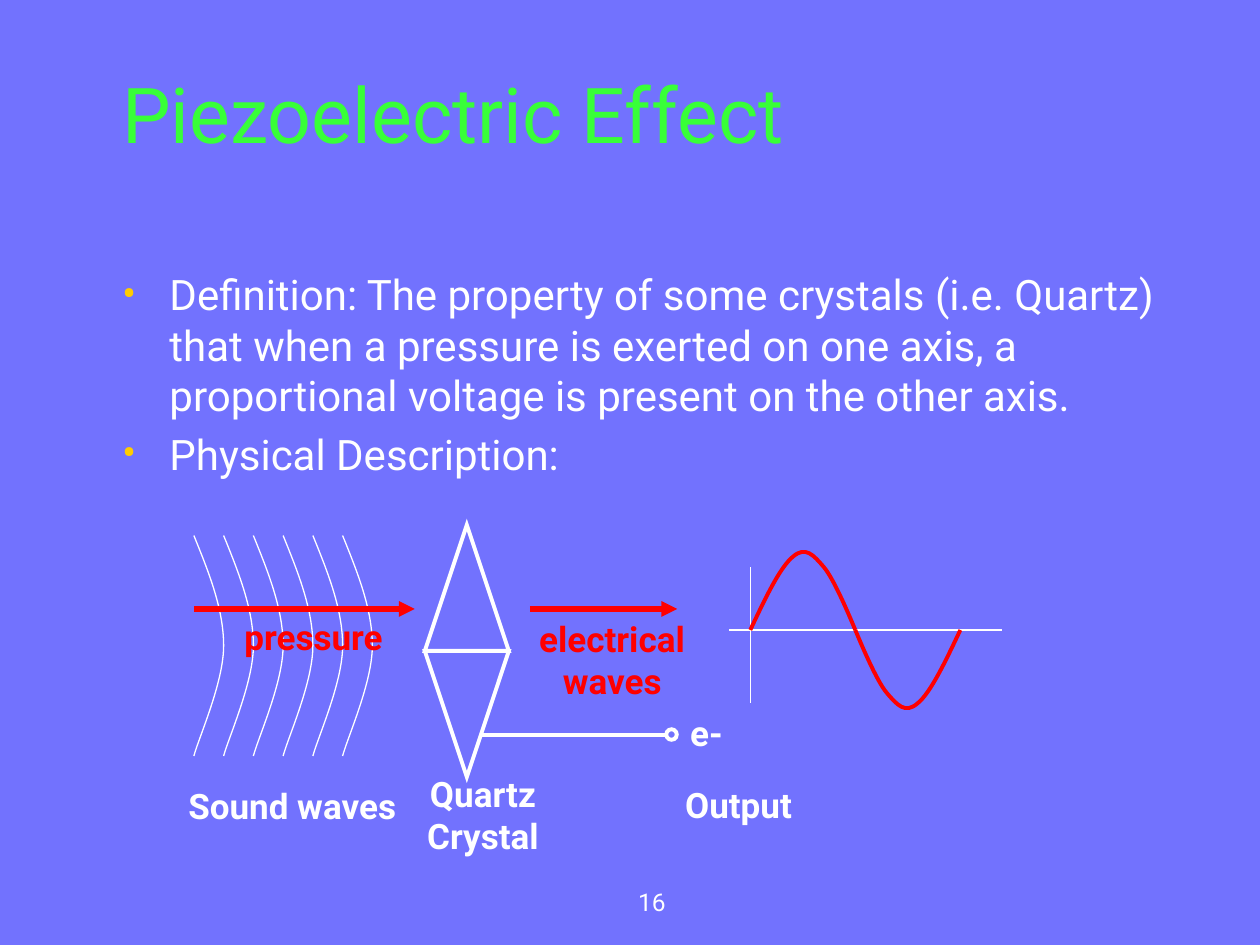
from dataclasses import dataclass

from lxml import etree
from pptx import Presentation
from pptx.dml.color import RGBColor as Rgb
from pptx.enum import shapes as kinds, text as txt
from pptx.oxml.ns import qn
from pptx.util import Pt


@dataclass(frozen=True)
class Theme:
    font: str = "Roboto"
    back: str = "7272FE"
    green: str = "38FF38"
    white: str = "FFFFFF"
    red: str = "FF0000"
    gold: str = "FFCC00"
    title: int = 44
    body: int = 24
    label: int = 20
    page: int = 14
    thin: float = 0.75
    mid: float = 2.25
    bold: float = 3


T = Theme()
MID = txt.PP_ALIGN.CENTER
LEFT = txt.PP_ALIGN.LEFT
TOP = txt.MSO_ANCHOR.TOP
RING = ((8.5, 21), (17, 42), (17, 63), (17, 84), (3, 115), (0, 126))
HUMP = ((8.5, -18), (17, -36), (24.5, -42), (31.5, -48), (36, -43),
        (42, -36), (48, -29), (57.5, -6), (60, 0))


def pen(shape, color, width):
    shape.line.color.rgb = Rgb.from_string(color)
    shape.line.width = Pt(width)


def bullet(para):
    props = para._p.get_or_add_pPr()
    props.set("marL", str(Pt(27)))
    props.set("indent", str(-Pt(27)))
    tint = etree.SubElement(props, qn("a:buClr"))
    etree.SubElement(tint, qn("a:srgbClr"), val=T.gold)
    etree.SubElement(props, qn("a:buFont"), typeface=T.font)
    etree.SubElement(props, qn("a:buChar"), char="•")


def write(slide, box, lines, size, color=T.white, bold=False, align=MID,
          anchor=TOP, wrap=True, dots=False, gap=0):
    frame = slide.shapes.add_textbox(*map(Pt, box)).text_frame
    frame.word_wrap = wrap
    frame.vertical_anchor = anchor
    for i, line in enumerate(lines):
        para = frame.add_paragraph() if i else frame.paragraphs[0]
        para.text = line
        para.alignment = align
        if dots:
            bullet(para)
        if i and gap:
            para.space_before = Pt(gap)
        font = para.font
        font.name, font.size, font.bold = T.font, Pt(size), bold
        font.color.rgb = Rgb.from_string(color)


def label(slide, box, *lines, color=T.white):
    write(slide, box, lines, T.label, color, bold=True, wrap=False)


def line(slide, start, end, color, width, arrow=False):
    link = slide.shapes.add_connector(
        kinds.MSO_CONNECTOR.STRAIGHT, *map(Pt, start + end))
    pen(link, color, width)
    if arrow:
        etree.SubElement(link.line._get_or_add_ln(), qn("a:tailEnd"),
                         type="triangle")
    etree.SubElement(link._element.spPr, qn("a:effectLst"))


def outline(slide, kind, box, turn=0):
    shape = slide.shapes.add_shape(kind, *map(Pt, box))
    shape.rotation = turn
    shape.shadow.inherit = False
    shape.fill.background()
    pen(shape, T.white, T.mid)
    etree.SubElement(shape.line._get_or_add_ln(), qn("a:miter"), lim="800000")


def bend(shape):
    legs = list(shape._element.iter(qn("a:lnTo")))
    for i in range(0, len(legs), 3):
        cubic = etree.Element(qn("a:cubicBezTo"))
        legs[i].addprevious(cubic)
        for leg in legs[i:i + 3]:
            cubic.append(leg[0])
            leg.getparent().remove(leg)


def curve(slide, x, y, knots, color, width, sign=1):
    path = slide.shapes.build_freeform(Pt(x), Pt(y))
    path.add_line_segments(
        [(Pt(x + sign * dx), Pt(y + sign * dy)) for dx, dy in knots],
        close=False)
    shape = path.convert_to_shape()
    bend(shape)
    shape.shadow.inherit = False
    shape.fill.background()
    pen(shape, color, width)


def sound(slide):
    rings = slide.shapes.add_group_shape()
    for i in range(6):
        curve(rings, 110.8 + 17 * i, 306, RING, T.white, T.thin)
    label(slide, (93, 445, 148, 32), "Sound waves")


def crystal(slide):
    kind = kinds.MSO_SHAPE.ISOSCELES_TRIANGLE
    gem = slide.shapes.add_group_shape()
    outline(gem, kind, (242.75, 300, 48, 72))
    outline(gem, kind, (242.75, 372, 48, 72), turn=180)
    label(slide, (233.5, 438, 85, 55), "Quartz", "Crystal")


def force(slide):
    line(slide, (111, 348), (237, 348), T.red, T.bold, arrow=True)
    label(slide, (128.2, 348, 102, 32), "pressure", color=T.red)
    label(slide, (296.3, 349.3, 107, 55), "electrical\vwaves", color=T.red)
    line(slide, (302.75, 348), (387, 348), T.red, T.bold, arrow=True)
    label(slide, (386.2, 403, 35, 32), "e-")


def output(slide):
    plot = slide.shapes.add_group_shape()
    line(plot, (428.75, 324), (428.75, 402), T.white, T.thin)
    line(plot, (416.75, 360), (572.5, 360), T.white, T.thin)
    curve(plot, 428.75, 360, HUMP, T.red, T.mid)
    curve(plot, 548.75, 360, HUMP, T.red, T.mid, sign=-1)
    line(slide, (274.5, 420), (381, 420), T.white, T.mid)
    outline(slide, kinds.MSO_SHAPE.OVAL, (380.75, 416.75, 6, 6))
    label(slide, (379.5, 444, 85, 32), "Output")


def main():
    deck = Presentation()
    deck.slide_width, deck.slide_height = Pt(720), Pt(540)
    slide = deck.slides.add_slide(deck.slide_layouts[6])
    fill = slide.background.fill
    fill.solid()
    fill.fore_color.rgb = Rgb.from_string(T.back)
    write(slide, (348.5, 491, 48, 36), ["16"], T.page,
          anchor=txt.MSO_ANCHOR.BOTTOM)
    write(slide, (62.75, 23, 648, 83), ["Piezoelectric Effect"], T.title,
          T.green, align=LEFT, anchor=txt.MSO_ANCHOR.MIDDLE)
    write(slide, (62.75, 150, 648, 324), [
        "Definition: The property of some crystals (i.e. Quartz) that when "
        "a pressure is exerted on one axis, a proportional voltage is "
        "present on the other axis.",
        "Physical Description:",
    ], T.body, align=LEFT, dots=True, gap=4.8)
    sound(slide)
    crystal(slide)
    force(slide)
    output(slide)
    deck.save("out.pptx")


if __name__ == "__main__":
    main()
